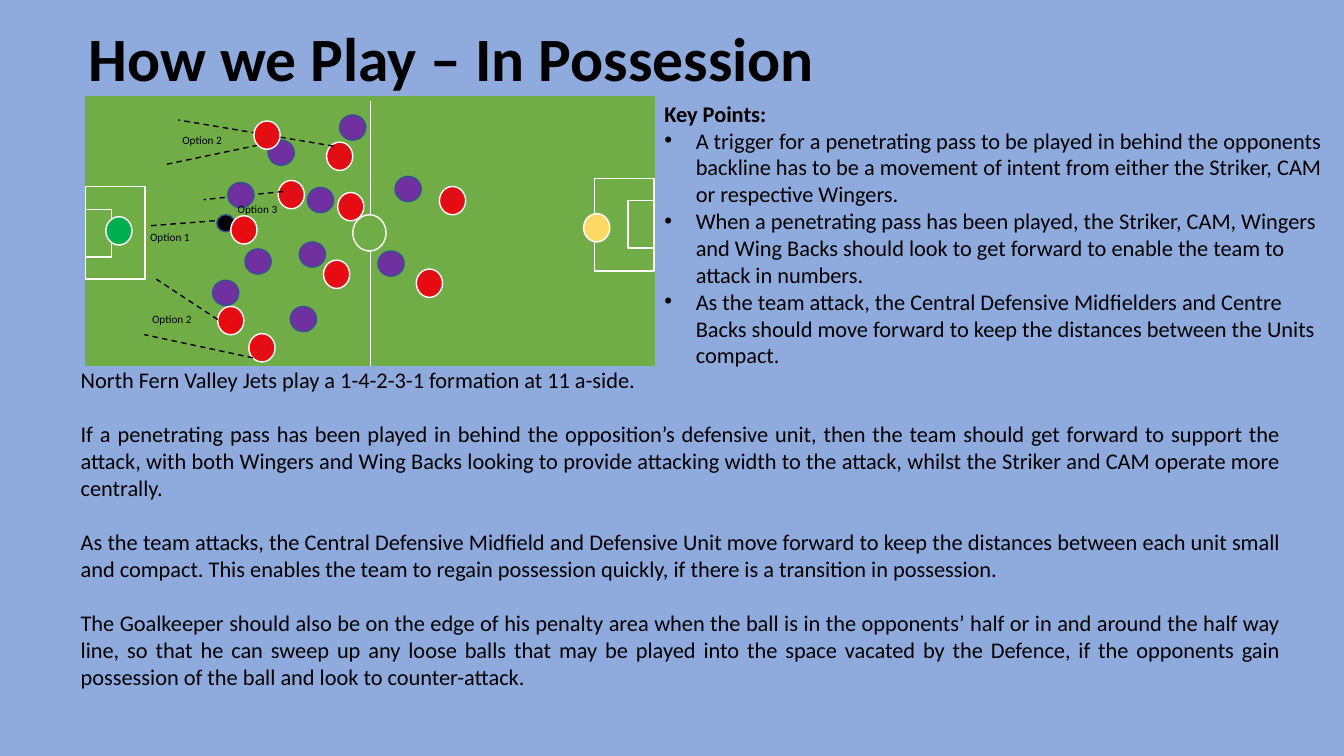
"""Build the slide on how the team plays in possession."""
from typing import NamedTuple

from lxml import etree
from pptx import Presentation
from pptx.dml.color import RGBColor
from pptx.enum.dml import MSO_LINE, MSO_PATTERN
from pptx.enum.shapes import MSO_CONNECTOR, MSO_SHAPE
from pptx.enum.text import MSO_ANCHOR, MSO_AUTO_SIZE, PP_ALIGN
from pptx.oxml.ns import qn
from pptx.util import Pt

RECT, OVAL = MSO_SHAPE.RECTANGLE, MSO_SHAPE.OVAL
STRAIGHT = MSO_CONNECTOR.STRAIGHT
DASH = MSO_LINE.DASH
HATCH = MSO_PATTERN.WIDE_UPWARD_DIAGONAL
LEFT, FULL = PP_ALIGN.LEFT, PP_ALIGN.JUSTIFY
TOP, MIDDLE = MSO_ANCHOR.TOP, MSO_ANCHOR.MIDDLE
FIXED = MSO_AUTO_SIZE.NONE

SKY = RGBColor(0x8F, 0xAA, 0xDC)
GRASS = RGBColor(0x70, 0xAD, 0x47)
WHITE = RGBColor(0xFF, 0xFF, 0xFF)
BLACK = RGBColor(0x00, 0x00, 0x00)
RED = RGBColor(0xFF, 0x00, 0x00)
BLUE = RGBColor(0x00, 0x70, 0xC0)
NAVY = RGBColor(0x32, 0x54, 0x91)
PURPLE = RGBColor(0x70, 0x30, 0xA0)
GREEN = RGBColor(0x00, 0xB0, 0x50)
GOLD = RGBColor(0xFF, 0xD9, 0x66)
FONT = "Calibri"
INDENT = 22.5


class Box(NamedTuple):
    """Hold a place and size in points."""
    left: float
    top: float
    width: float
    height: float


class Look(NamedTuple):
    """Hold the form and colours of a mark."""
    form: int
    fill: RGBColor
    edge: RGBColor
    hatch: bool = False


class Squad(NamedTuple):
    """Hold the spots of like players."""
    look: Look
    width: float
    height: float
    spots: list


class Stroke(NamedTuple):
    """Hold the two ends of a line."""
    x1: float
    y1: float
    x2: float
    y2: float


class Label(NamedTuple):
    """Hold the words and spot of a label."""
    text: str
    left: float
    top: float


FIELD = Look(RECT, GRASS, GRASS)
AREA = Look(RECT, GRASS, WHITE)
ROUND = Look(OVAL, GRASS, WHITE)
MATE = Look(OVAL, RED, WHITE, True)
RIVAL = Look(OVAL, PURPLE, NAVY)

PITCH = [
    (FIELD, Box(61.2, 69.1, 406.1, 192.2)),
    (ROUND, Box(252, 153.4, 23.8, 25.9)),
    (AREA, Box(424.8, 127.4, 42.5, 66.2)),
    (AREA, Box(61.2, 133.2, 42.5, 66.2)),
    (AREA, Box(61.2, 149.8, 18.7, 33.8)),
    (AREA, Box(448.6, 143.3, 18.7, 33.8)),
]
HALFWAY = [Stroke(264.2, 72, 264.2, 153.4), Stroke(264.2, 179.3, 264.2, 261.4)]

SQUADS = [
    Squad(Look(OVAL, GOLD, WHITE), 18.7, 20.2, [(416.9, 152.6)]),
    Squad(MATE, 18.7, 20.2, [
        (177.8, 238.3), (297.4, 192.2), (313.9, 133.2), (233.3, 101.5),
        (241.2, 137.5), (231.1, 185.8), (198.7, 128.9)]),
    Squad(Look(OVAL, BLACK, NAVY), 13, 12.2, [(154.8, 153.4)]),
    Squad(RIVAL, 18.7, 18, [
        (270, 179.3), (207.4, 218.9), (282.2, 126), (242.6, 82.1),
        (213.8, 172.8), (219.6, 133.9), (175, 177.8), (191.5, 100.1),
        (151.9, 200.2)]),
    Squad(MATE, 18.7, 20.2, [(155.5, 218.9), (164.9, 154.1)]),
    Squad(Look(OVAL, GREEN, WHITE), 18.7, 20.2, [(75.6, 154.8)]),
]
FRONT = [
    Squad(MATE, 18.7, 20.2, [(181.4, 86.4)]),
    Squad(RIVAL, 18.7, 18, [(162.7, 130.3)]),
]
PASSES = [
    Stroke(155.5, 228.2, 111.6, 199.4), Stroke(184.3, 103.7, 118.8, 117.4),
    Stroke(180.7, 255.6, 103, 239), Stroke(238.3, 104.4, 127.4, 85.7),
    Stroke(153.4, 157.7, 106.6, 161.3), Stroke(202.3, 136.8, 145.4, 142.6),
]
LABELS = [
    Label("Option 2", 123.1, 91.4), Label("Option 3", 162.7, 141.1),
    Label("Option 2", 101.5, 219.6), Label("Option 1", 100.1, 161.3),
]

TITLE = "How we Play – In Possession"
POINTS = [
    "Key Points:",
    "A trigger for a penetrating pass to be played in behind the opponents backline has to be a movement of intent from either the Striker, CAM or respective Wingers.",
    "When a penetrating pass has been played, the Striker, CAM, Wingers and Wing Backs should look to get forward to enable the team to attack in numbers.",
    "As the team attack, the Central Defensive Midfielders and Centre Backs should move forward to keep the distances between the Units compact.",
]
STORY = [
    "North Fern Valley Jets play a 1-4-2-3-1 formation at 11 a-side.",
    "If a penetrating pass has been played in behind the opposition’s defensive unit, then the team should get forward to support the attack, with both Wingers and Wing Backs looking to provide attacking width to the attack, whilst the Striker and CAM operate more centrally.",
    "As the team attacks, the Central Defensive Midfield and Defensive Unit move forward to keep the distances between each unit small and compact. This enables the team to regain possession quickly, if there is a transition in possession.",
    "The Goalkeeper should also be on the edge of his penalty area when the ball is in the opponents’ half or in and around the half way line, so that he can sweep up any loose balls that may be played into the space vacated by the Defence, if the opponents gain possession of the ball and look to counter-attack.",
]


def draw_mark(slide, look: Look, box: Box) -> None:
    """Draw one filled mark."""
    mark = slide.shapes.add_shape(look.form, *map(Pt, box))
    mark.shadow.inherit = False
    if look.hatch:
        mark.fill.patterned()
        mark.fill.pattern = HATCH
        mark.fill.fore_color.rgb = BLUE
        mark.fill.back_color.rgb = look.fill
    else:
        mark.fill.solid()
        mark.fill.fore_color.rgb = look.fill
    mark.line.color.rgb = look.edge
    mark.line.width = Pt(1)


def draw_squad(slide, squad: Squad) -> None:
    """Draw each player of a squad."""
    for left, top in squad.spots:
        draw_mark(slide, squad.look, Box(left, top, squad.width, squad.height))


def draw_line(slide, ends: Stroke, color: RGBColor, width: float, dash=None) -> None:
    """Draw one straight line."""
    line = slide.shapes.add_connector(STRAIGHT, *map(Pt, ends))
    line.line.color.rgb = color
    line.line.width = Pt(width)
    line.line.dash_style = dash
    etree.SubElement(line._element.spPr, qn("a:effectLst"))


def write(shape, box: Box, lines: list, size: float, bold=False, anchor=TOP) -> list:
    """Place a shape, set its text and return the paragraphs."""
    shape.left, shape.top, shape.width, shape.height = map(Pt, box)
    frame = shape.text_frame
    frame.text = "\n".join(lines)
    frame.word_wrap = True
    frame.auto_size = FIXED
    frame.vertical_anchor = anchor
    for para in frame.paragraphs:
        para.alignment = LEFT
        para.space_before = Pt(0)
        for run in para.runs:
            run.font.name = FONT
            run.font.size = Pt(size)
            run.font.bold = bold
            run.font.color.rgb = BLACK
    return list(frame.paragraphs)


def set_bullet(para, shown: bool) -> None:
    """Show or drop the bullet of a paragraph."""
    props = para._p.get_or_add_pPr()
    indent = Pt(INDENT) if shown else 0
    props.set("marL", str(indent))
    props.set("indent", str(-indent))
    if shown:
        etree.SubElement(props, qn("a:buFont")).set("typeface", "Arial")
        etree.SubElement(props, qn("a:buChar")).set("char", "•")
    else:
        etree.SubElement(props, qn("a:buNone"))


def main() -> None:
    """Build and save the deck."""
    deck = Presentation()
    deck.slide_width, deck.slide_height = Pt(960), Pt(540)
    slide = deck.slides.add_slide(deck.slide_layouts[3])
    slide.background.fill.solid()
    slide.background.fill.fore_color.rgb = SKY
    title, points, story = slide.placeholders

    head = write(title, Box(56.2, 11.5, 800.6, 65.5), [TITLE], 44, True, MIDDLE)
    head[0].line_spacing = 0.9
    for index, para in enumerate(write(points, Box(467.3, 67.7, 492.5, 200.9), POINTS, 16)):
        set_bullet(para, index > 0)
        para.runs[0].font.bold = index == 0
    for index, para in enumerate(write(story, Box(50.4, 257.8, 871.9, 239.8), STORY, 16)):
        if index:
            para.alignment = FULL
            para.space_before = Pt(19.5)
        set_bullet(para, False)

    for look, box in PITCH:
        draw_mark(slide, look, box)
    for ends in HALFWAY:
        draw_line(slide, ends, WHITE, 0.5)
    for squad in SQUADS:
        draw_squad(slide, squad)
    for ends in PASSES:
        draw_line(slide, ends, BLACK, 1, DASH)
    for squad in FRONT:
        draw_squad(slide, squad)
    for label in LABELS:
        box = Box(label.left, label.top, 49.7, 17.3)
        write(slide.shapes.add_textbox(*map(Pt, box)), box, [label.text], 8)
    deck.save("out.pptx")


if __name__ == "__main__":
    main()
